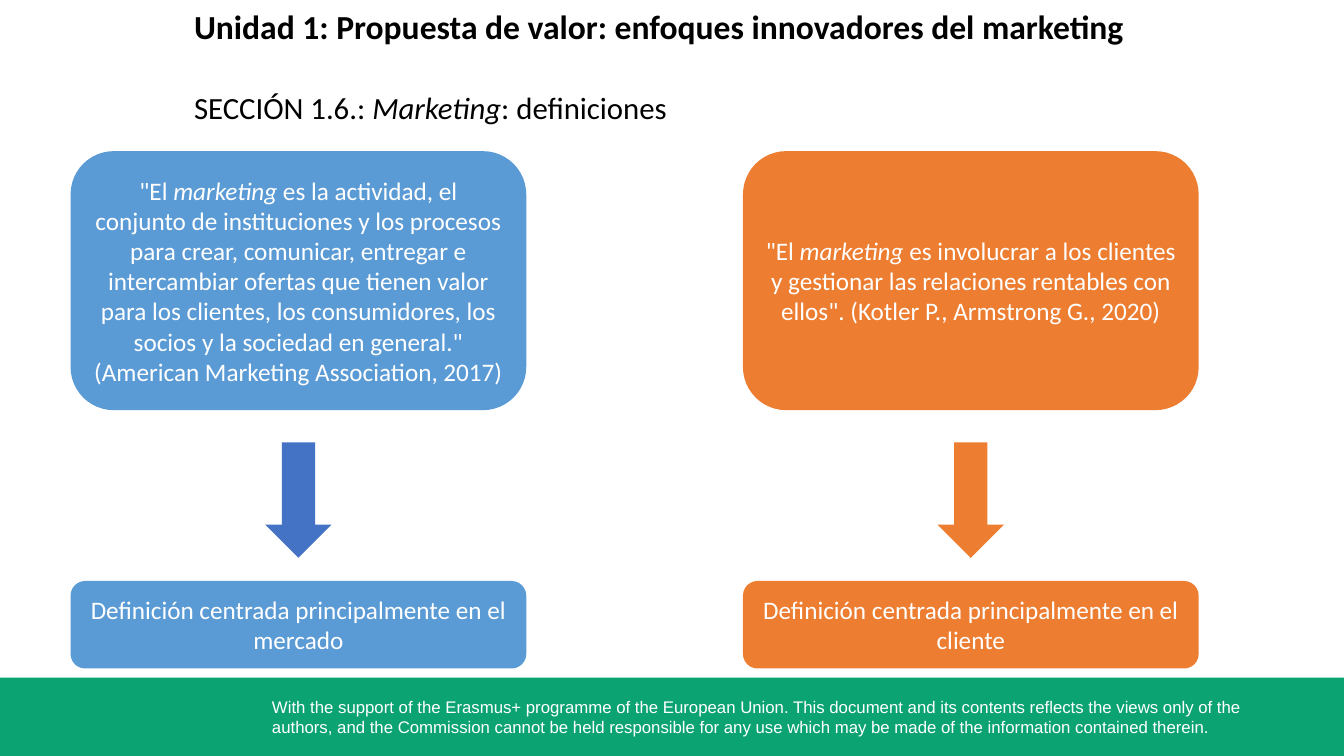
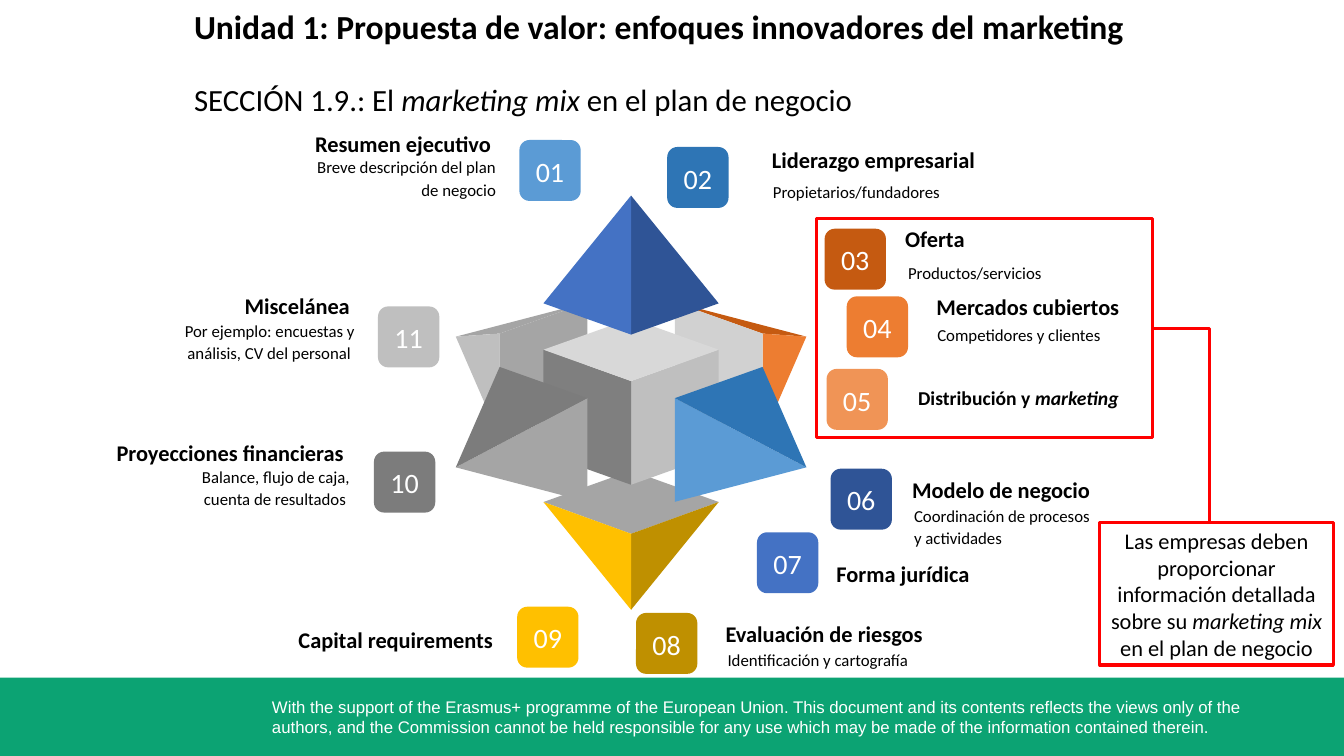
import pptx
import pptx.dml.color
import pptx.enum.shapes
import pptx.enum.text
import pptx.oxml
import pptx.util

Pt = pptx.util.Pt
RGBColor = pptx.dml.color.RGBColor
SHAPE = pptx.enum.shapes.MSO_SHAPE
ALIGN = pptx.enum.text.PP_ALIGN
ANCHOR = pptx.enum.text.MSO_ANCHOR

BLACK = RGBColor(0x00, 0x00, 0x00)
WHITE = RGBColor(0xFF, 0xFF, 0xFF)
GREEN = RGBColor(0x0C, 0xA3, 0x73)
RED = RGBColor(0xFF, 0x00, 0x00)
SKY = RGBColor(0x5B, 0x9B, 0xD5)
OCEAN = RGBColor(0x2E, 0x75, 0xB5)
BLUE = RGBColor(0x44, 0x72, 0xC4)
NAVY = RGBColor(0x2F, 0x54, 0x96)
ORANGE = RGBColor(0xED, 0x7D, 0x31)
RUST = RGBColor(0xC5, 0x5A, 0x11)
PEACH = RGBColor(0xF0, 0x94, 0x56)
GOLD = RGBColor(0xFF, 0xC0, 0x00)
DARK_GOLD = RGBColor(0xBF, 0x90, 0x00)
CHARCOAL = RGBColor(0x7C, 0x7C, 0x7C)
DARK_GREY = RGBColor(0x7F, 0x7F, 0x7F)
GREY = RGBColor(0xA5, 0xA5, 0xA5)
SILVER = RGBColor(0xBF, 0xBF, 0xBF)
PALE_GREY = RGBColor(0xD1, 0xD1, 0xD1)
MIST = RGBColor(0xD8, 0xD8, 0xD8)

UNIT_TITLE = "Unidad 1: Propuesta de valor: enfoques innovadores del marketing"
DISCLAIMER = (
    "With the support of the Erasmus+ programme of the European Union. "
    "This document and its contents reflects the views only of the authors, "
    "and the Commission cannot be held responsible for any use which may be "
    "made of the information contained therein."
)

DEFINITIONS = [
    (50.4, SKY, BLUE,
     '"El *marketing* es la actividad, el conjunto de instituciones y los '
     "procesos para crear, comunicar, entregar e intercambiar ofertas que "
     "tienen valor para los clientes, los consumidores, los socios y la "
     'sociedad en general." (American Marketing Association, 2017)',
     "Definición centrada principalmente en el mercado"),
    (530.7, ORANGE, ORANGE,
     '"El *marketing* es involucrar a los clientes y gestionar las relaciones '
     'rentables con ellos". (Kotler P., Armstrong G., 2020)',
     "Definición centrada principalmente en el cliente"),
]

LEFT, RIGHT = ALIGN.LEFT, ALIGN.RIGHT
PLAN_PARTS = [
    ("01", SKY, 371, 100, RIGHT, ("Resumen ejecutivo", 357.8, 89.3),
     ("Breve descripción del plan de negocio", 361.4, 107.3)),
    ("02", OCEAN, 476.6, 105, LEFT, ("Liderazgo empresarial", 544.3, 100.8),
     ("Propietarios/fundadores", 545, 124.6)),
    ("03", RUST, 589, 163.4, LEFT, ("Oferta", 639.4, 157),
     ("Productos/servicios", 641.5, 182.9)),
    ("04", ORANGE, 604.8, 211.7, LEFT, ("Mercados cubiertos", 661.7, 206),
     ("Competidores y clientes", 662.4, 226.8)),
    ("05", PEACH, 590.4, 263.5, LEFT,
     ("Distribución y *marketing*", 648.7, 272.2), None),
    ("06", NAVY, 593.3, 334.8, LEFT, ("Modelo de negocio", 644.4, 336.2),
     ("Coordinación de procesos y actividades", 645.8, 356.4)),
    ("07", BLUE, 540.7, 380.2, LEFT, ("Forma jurídica", 590.4, 396.7), None),
    ("08", DARK_GOLD, 454.3, 437.8, LEFT,
     ("Evaluación de riesgos", 511.2, 439.2),
     ("Identificación y cartografía", 512.6, 459.4)),
    ("09", GOLD, 369.4, 433.4, RIGHT,
     ("Capital requirements", 359.3, 443.5), None),
    ("10", CHARCOAL, 267.1, 322.6, RIGHT,
     ("Proyecciones financieras", 252.7, 310.3),
     ("Balance, flujo de caja, cuenta de resultados ", 257, 328.3)),
    ("11", SILVER, 270, 218.9, RIGHT, ("Miscelánea", 257, 205.2),
     ("Por ejemplo: encuestas y análisis, CV del personal ", 260.6, 224)),
]

FIGURE_AXIS, FIGURE_STEP = 450.8, 31.3
FACETS = [
    ([(4, 240.5), (1, 216), (3, 238.3)], RUST, GREY),
    ([(3, 312.5), (4, 240.5), (3, 238.3)], ORANGE, SILVER),
    ([(3, 312.5), (3, 238.3), (1, 216), (1, 290.2)], PALE_GREY, GREY),
    ([(0, 381.3), (-2, 358.6), (0, 336.2), (2, 358.6)], GREY, None),
    ([(0, 435.6), (0, 381.3), (2, 358.6)], DARK_GOLD, GOLD),
    ([(0, 272.2), (0, 346.3), (2, 324), (2, 249.8)], SILVER, DARK_GREY),
    ([(0, 227.5), (-2, 249.8), (0, 272.2), (2, 249.8)], MIST, None),
    ([(0, 139.7), (0, 239), (2, 216.7)], NAVY, BLUE),
    ([(4, 333.8), (1, 358.4), (1, 284.4)], SKY, GREY),
    ([(3, 262.1), (4, 333.8), (1, 284.4)], OCEAN, CHARCOAL),
]


def write(frame, text, size=18, color=BLACK, font="Calibri", bold=False,
          align=LEFT, anchor=ANCHOR.TOP, spacing=None,
          insets=(7.2, 3.6, 7.2, 3.6), wrap=True):
    frame.word_wrap = wrap
    frame.auto_size = pptx.enum.text.MSO_AUTO_SIZE.NONE
    frame.vertical_anchor = anchor
    (frame.margin_left, frame.margin_top,
     frame.margin_right, frame.margin_bottom) = map(Pt, insets)
    paragraph = frame.paragraphs[0]
    paragraph.alignment = align
    if spacing:
        paragraph.line_spacing = spacing
    for index, piece in enumerate(text.split("*")):
        if piece:
            run = paragraph.add_run()
            run.text = piece
            run.font.name = font
            run.font.size = Pt(size)
            run.font.bold = bold
            run.font.italic = index % 2 == 1
            run.font.color.rgb = color


class Deck:
    def __init__(self):
        self.presentation = pptx.Presentation()
        self.presentation.slide_width = Pt(960)
        self.presentation.slide_height = Pt(540)
        self.slide = None

    def start(self, section, section_top):
        layout = self.presentation.slide_layouts[5]
        self.slide = self.presentation.slides.add_slide(layout)
        title = self.slide.shapes.title
        title.left, title.top = Pt(138.6), Pt(3.6)
        title.width, title.height = Pt(816), Pt(30)
        write(title.text_frame, UNIT_TITLE, size=24, bold=True,
              insets=(0, 0.7, 0, 0))
        self.shape(SHAPE.RECTANGLE, 0, 484, 960, 56, fill=GREEN)
        self.text(DISCLAIMER, 187.2, 494, 750, 36, size=12, color=WHITE,
                  font="Arial")
        self.text(section, 138.6, section_top, 752, 28, size=22,
                  insets=(0, 1.4, 0, 0))

    def text(self, text, left, top, width, height, **style):
        box = self.slide.shapes.add_textbox(
            Pt(left), Pt(top), Pt(width), Pt(height))
        write(box.text_frame, text, **style)

    def paint(self, shape, fill=None, line=None):
        shape.shadow.inherit = False
        if fill is None:
            shape.fill.background()
        else:
            shape.fill.solid()
            shape.fill.fore_color.rgb = fill
        if line is None:
            shape.line.fill.background()
        else:
            shape.line.color.rgb = line
            shape.line.width = Pt(2.25)

    def shape(self, kind, left, top, width, height, fill=None, line=None,
              text=None, **style):
        shape = self.slide.shapes.add_shape(
            kind, Pt(left), Pt(top), Pt(width), Pt(height))
        self.paint(shape, fill, line)
        if text:
            write(shape.text_frame, text, align=ALIGN.CENTER,
                  anchor=ANCHOR.MIDDLE, **style)

    def polygon(self, points, fill):
        corners = [(Pt(x), Pt(y)) for x, y in points]
        builder = self.slide.shapes.build_freeform(*corners[0], scale=1.0)
        builder.add_line_segments(corners[1:], close=True)
        self.paint(builder.convert_to_shape(), fill)

    def elbow(self, start_x, start_y, end_x, end_y, color):
        connector = self.slide.shapes.add_connector(
            pptx.enum.shapes.MSO_CONNECTOR.ELBOW,
            Pt(start_x), Pt(start_y), Pt(end_x), Pt(end_y))
        connector.line.color.rgb = color
        connector.line.width = Pt(2.25)
        properties = connector._element.spPr
        properties.find(pptx.oxml.ns.qn("a:prstGeom")).set(
            "prst", "bentConnector2")
        properties.append(pptx.oxml.xmlchemy.OxmlElement("a:effectLst"))

    def label(self, text, edge, top, width, height, align, **style):
        left = edge - width if align == RIGHT else edge
        self.text(text, left, top, width, height, align=align, **style)


def build_definitions(deck):
    deck.start("SECCIÓN 1.6.: *Marketing*: definiciones", 61.9)
    width, arrow_width = 325.5, 47.5
    for left, color, arrow_color, definition, focus in DEFINITIONS:
        deck.shape(SHAPE.ROUNDED_RECTANGLE, left, 108, width, 185,
                   fill=color, text=definition, color=WHITE)
        deck.shape(SHAPE.DOWN_ARROW, left + (width - arrow_width) / 2, 316,
                   arrow_width, 82.5, fill=arrow_color)
        deck.shape(SHAPE.ROUNDED_RECTANGLE, left, 415, width, 62.5,
                   fill=color, text=focus, color=WHITE)


def build_marketing_mix(deck):
    deck.start("SECCIÓN 1.9.: El *marketing mix* en el plan de negocio", 56.5)
    for points, right_color, left_color in FACETS:
        for side, color in ((1, right_color), (-1, left_color)):
            if color is not None:
                deck.polygon([(FIGURE_AXIS + side * FIGURE_STEP * x, y)
                              for x, y in points], color)
    for number, color, left, top, align, heading, detail in PLAN_PARTS:
        deck.shape(SHAPE.ROUNDED_RECTANGLE, left, top, 43.8, 43.5, fill=color,
                   text=number, size=20, color=WHITE, spacing=0.89,
                   insets=(0, 4, 0, 0), wrap=False)
        if detail:
            deck.label(*detail, 146, 40, align, size=12, spacing=1.1)
        deck.label(*heading, 190, 27, align, bold=True,
                   size=14 if number == "05" else 16)
    deck.shape(SHAPE.RECTANGLE, 583.2, 156, 240, 156.5, line=RED)
    deck.elbow(823.2, 234.5, 864, 373, RED)
    deck.shape(SHAPE.RECTANGLE, 785.5, 373.5, 167, 101.5, line=RED, size=16,
               text="Las empresas deben proporcionar información detallada "
                    "sobre su *marketing mix* en el plan de negocio")


def main():
    deck = Deck()
    build_definitions(deck)
    build_marketing_mix(deck)
    deck.presentation.save("out.pptx")


if __name__ == "__main__":
    main()
